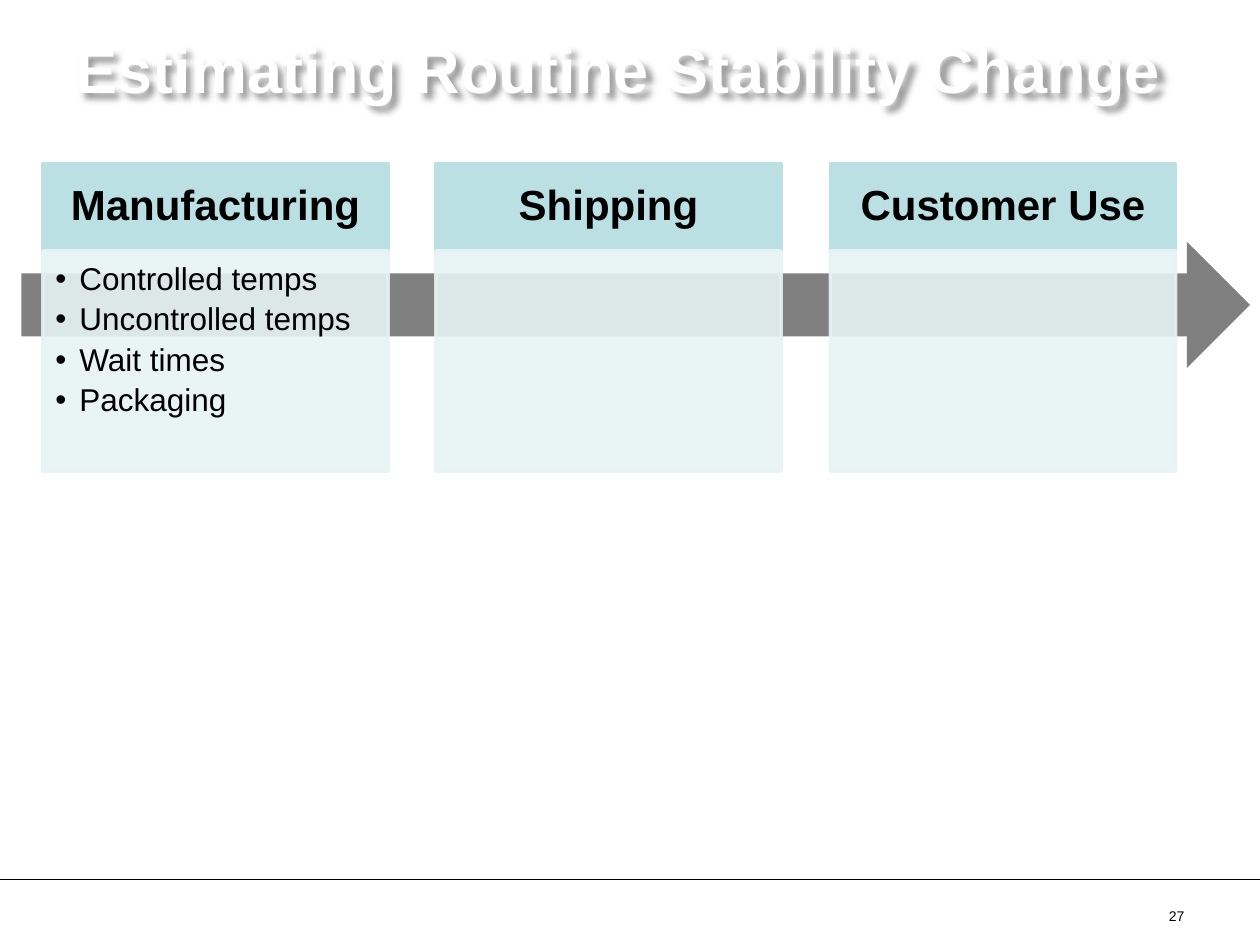
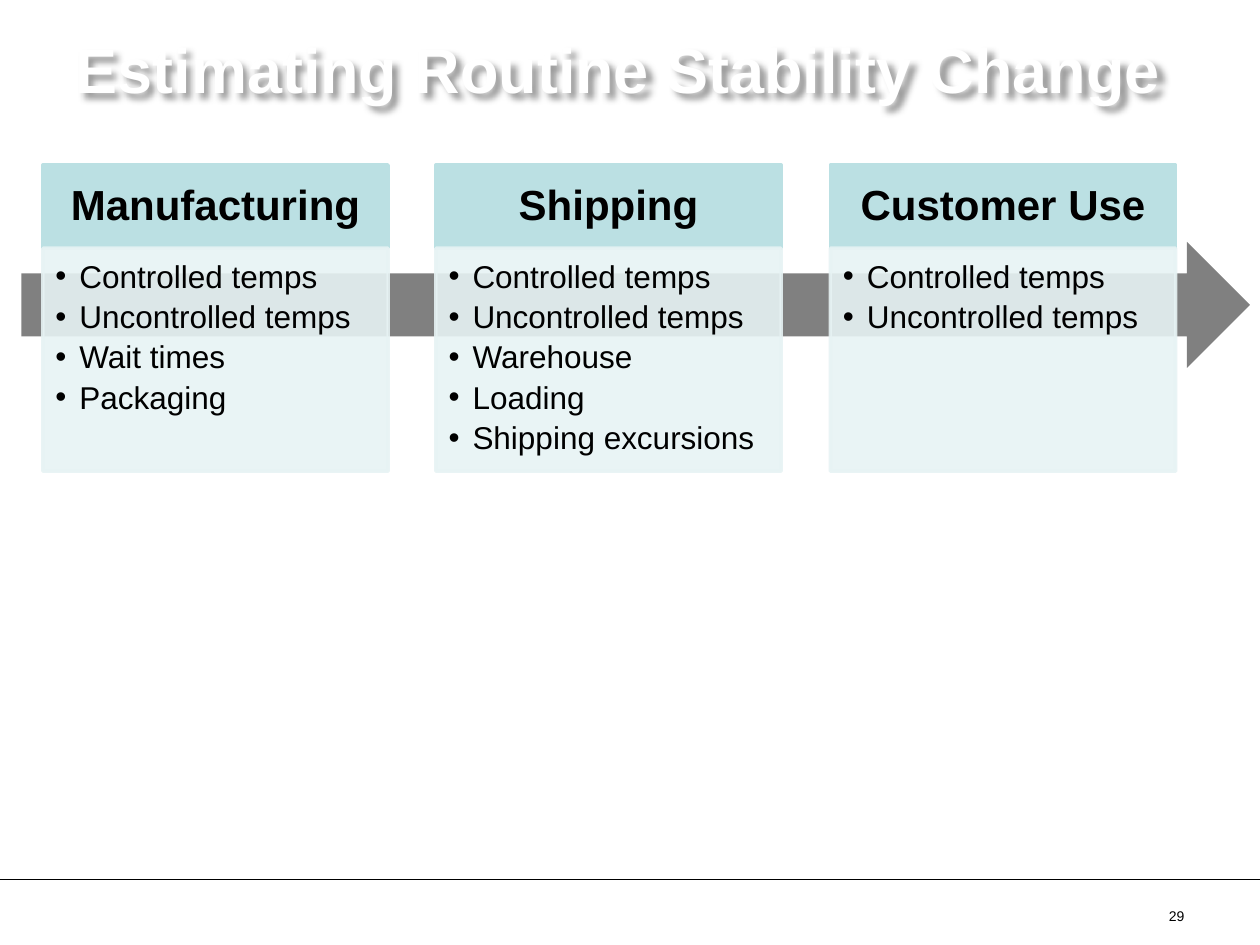
from lxml import etree
from pptx import Presentation
from pptx import util as u
from pptx.dml.color import RGBColor
from pptx.enum import shapes, text
from pptx.oxml.ns import qn

EMU_PER_PX = 9144
COLORS = {
    "title": "FFFFFF",
    "ink": "000000",
    "arrow": "808080",
    "header": "BBE0E3",
    "panel": "E7F3F4",
}
TITLE = "Estimating Routine Stability Change"
STAGES = ("Manufacturing", "Shipping", "Customer Use")
MANUFACTURING = ("Controlled temps", "Uncontrolled temps", "Wait times", "Packaging")
SHIPPING = ("Controlled temps", "Uncontrolled temps", "Warehouse", "Loading", "Shipping excursions")
CUSTOMER_USE = ("Controlled temps", "Uncontrolled temps")
SLIDES = (
    {"number": 27, "top": 130, "split": 199, "factors": (MANUFACTURING, (), ())},
    {"number": 29, "top": 131, "split": 197, "factors": (MANUFACTURING, SHIPPING, CUSTOMER_USE)},
)
STAGE_LEFT, STAGE_WIDTH, STAGE_BOTTOM = 34, 274, 374


def px(length):
    return u.Emu(length * EMU_PER_PX)


def rgb(name):
    return RGBColor.from_string(COLORS[name])


class Deck:
    font = "Arial"

    def __init__(self):
        self.prs = Presentation()
        self.prs.slide_width, self.prs.slide_height = px(1000), px(750)
        self.slide = None
        self.bodies = []

    def new_slide(self):
        self.slide = self.prs.slides.add_slide(self.prs.slide_layouts.get_by_name("Comparison"))
        self.bodies = [p for p in self.slide.placeholders if p.placeholder_format.idx]

    def drop_unused_bodies(self):
        for body in self.bodies:
            body.element.getparent().remove(body.element)

    def place(self, shape, left, top, width, height):
        shape.left, shape.top, shape.width, shape.height = map(px, (left, top, width, height))

    def style(self, paragraph, size, color="ink", bold=False, align=text.PP_ALIGN.LEFT):
        paragraph.alignment = align
        for run in paragraph.runs:
            run.font.name, run.font.size, run.font.bold = self.font, u.Pt(size), bold
            run.font.color.rgb = rgb(color)

    def frame(self, shape, anchor, insets=(10, 5, 10, 5)):
        frame = shape.text_frame
        frame.word_wrap = True
        frame.auto_size = text.MSO_AUTO_SIZE.NONE
        frame.vertical_anchor = anchor
        (frame.margin_left, frame.margin_top,
         frame.margin_right, frame.margin_bottom) = map(px, insets)
        return frame

    def paint(self, shape, color, outline=True, opacity=100):
        shape.fill.solid()
        shape.fill.fore_color.rgb = rgb(color)
        if outline:
            shape.line.color.rgb = rgb(color)
            shape.line.width = u.Pt(2)
        else:
            shape.line.fill.background()
        if opacity < 100:
            for tint in shape.element.spPr.iter(qn("a:srgbClr")):
                etree.SubElement(tint, qn("a:alpha"), val=str(opacity * 1000))

    def block(self, kind, box, color, **paint):
        shape = self.slide.shapes.add_shape(kind, *map(px, box))
        shape.shadow.inherit = False
        self.paint(shape, color, **paint)
        return shape

    def title(self, words):
        heading = self.slide.shapes.title
        self.place(heading, 50, 15, 900, 78)
        frame = self.frame(heading, text.MSO_ANCHOR.MIDDLE)
        frame.text = words
        self.style(frame.paragraphs[0], 36, "title", bold=True)
        effects = etree.SubElement(heading.element.spPr, qn("a:effectLst"))
        shadow = etree.SubElement(effects, qn("a:outerShdw"), blurRad="50800",
                                  dist="50800", dir="2700000", algn="tl", rotWithShape="0")
        tint = etree.SubElement(shadow, qn("a:srgbClr"), val=COLORS["ink"])
        etree.SubElement(tint, qn("a:alpha"), val="40000")

    def timeline(self):
        self.block(shapes.MSO_SHAPE.RIGHT_ARROW, (17, 192, 975, 100), "arrow", outline=False)

    def header(self, words, box):
        label = self.block(shapes.MSO_SHAPE.RECTANGLE, box, "header")
        frame = self.frame(label, text.MSO_ANCHOR.MIDDLE, (19, 11, 19, 11))
        frame.text = words
        frame.paragraphs[0].line_spacing = 0.9
        self.style(frame.paragraphs[0], 24, bold=True, align=text.PP_ALIGN.CENTER)

    def panel(self, factors, box):
        if not factors:
            self.block(shapes.MSO_SHAPE.RECTANGLE, box, "panel", opacity=90)
            return
        body = self.bodies.pop(0)
        body.element.getparent().append(body.element)
        self.place(body, *box)
        self.paint(body, "panel", opacity=90)
        frame = self.frame(body, text.MSO_ANCHOR.TOP, (10, 10, 14, 16))
        frame.text = "\n".join(factors)
        for paragraph in frame.paragraphs:
            self.bullet(paragraph)
            paragraph.line_spacing = 0.9
            paragraph.space_before, paragraph.space_after = u.Pt(0), u.Pt(3.6)
            self.style(paragraph, 18)

    def bullet(self, paragraph):
        paragraph.level = 1
        properties = paragraph._p.get_or_add_pPr()
        properties.set("marL", str(px(19)))
        properties.set("indent", str(px(-19)))
        etree.SubElement(properties, qn("a:buFont"), typeface=self.font)
        etree.SubElement(properties, qn("a:buChar"), char="•")

    def footer(self, number):
        rule = self.slide.shapes.add_connector(
            shapes.MSO_CONNECTOR.STRAIGHT, *map(px, (0, 698, 1000, 698)))
        rule.line.color.rgb = rgb("ink")
        rule.line.width = u.Pt(0.5)
        etree.SubElement(rule.element.spPr, qn("a:effectLst"))
        page = self.slide.shapes.add_textbox(*map(px, (717, 715, 233, 27)))
        frame = self.frame(page, text.MSO_ANCHOR.TOP)
        frame.text = str(number)
        self.style(frame.paragraphs[0], 8, align=text.PP_ALIGN.RIGHT)


def main():
    deck = Deck()
    for content in SLIDES:
        top, split = content["top"], content["split"]
        deck.new_slide()
        deck.title(TITLE)
        deck.timeline()
        for column, (stage, factors) in enumerate(zip(STAGES, content["factors"])):
            left = STAGE_LEFT + column * 625 // 2
            deck.header(stage, (left, top, STAGE_WIDTH, split - top))
            deck.panel(factors, (left, split, STAGE_WIDTH, STAGE_BOTTOM - split))
        deck.footer(content["number"])
        deck.drop_unused_bodies()
    deck.prs.save("out.pptx")


if __name__ == "__main__":
    main()
